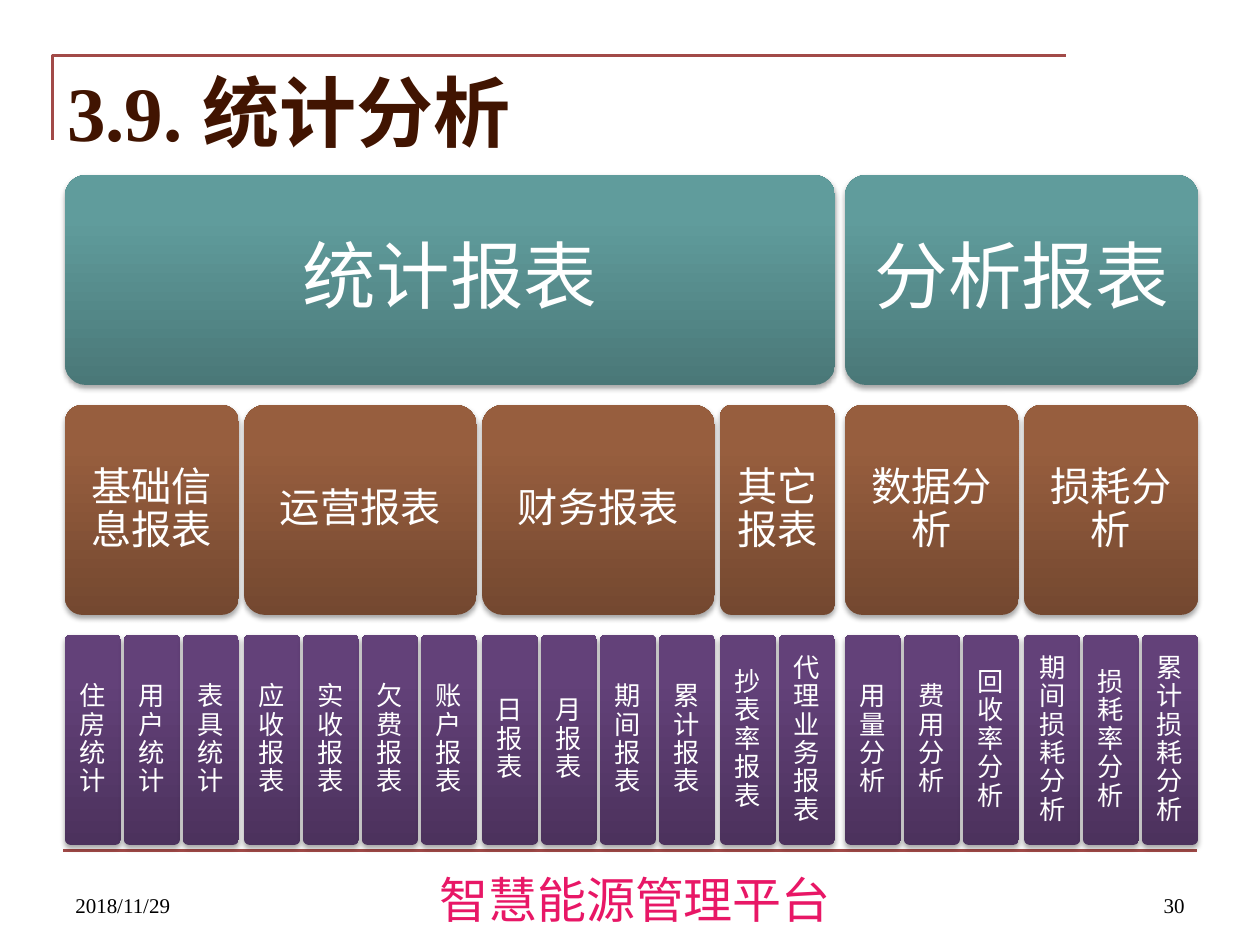
from copy import deepcopy

from lxml.etree import SubElement
from pptx import Presentation
from pptx.dml.color import RGBColor
from pptx.enum.shapes import MSO_CONNECTOR, MSO_SHAPE
from pptx.enum.text import MSO_ANCHOR, PP_ALIGN
from pptx.oxml.ns import qn
from pptx.util import Pt

WHITE = RGBColor(0xFF, 0xFF, 0xFF)
BLACK = RGBColor(0x00, 0x00, 0x00)
RULE_RED = RGBColor(0xA2, 0x4A, 0x48)
TITLE_BROWN = RGBColor(0x41, 0x14, 0x01)
FOOTER_PINK = RGBColor(0xE8, 0x17, 0x66)
TEAL = (RGBColor(0x4A, 0x78, 0x78), RGBColor(0x60, 0x9C, 0x9C), RGBColor(0x5F, 0x9E, 0x9E))
BROWN = (RGBColor(0x74, 0x48, 0x30), RGBColor(0x97, 0x5E, 0x3E), RGBColor(0x99, 0x5E, 0x3D))
PURPLE = (RGBColor(0x4C, 0x32, 0x5D), RGBColor(0x63, 0x41, 0x79), RGBColor(0x64, 0x41, 0x7A))
STOPS = (0, 0.8, 1)

SERIF, SANS, CJK = "Times New Roman", "Arial", "Noto Sans CJK SC"

# Report hierarchy: section, its groups, and their reports
SECTIONS = [
    ("统计报表", [
        ("基础信息报表", ["住房统计", "用户统计", "表具统计"]),
        ("运营报表", ["应收报表", "实收报表", "欠费报表", "账户报表"]),
        ("财务报表", ["日报表", "月报表", "期间报表", "累计报表"]),
        ("其它报表", ["抄表率报表", "代理业务报表"]),
    ]),
    ("分析报表", [
        ("数据分析", ["用量分析", "费用分析", "回收率分析"]),
        ("损耗分析", ["期间损耗分析", "损耗率分析", "累计损耗分析"]),
    ]),
]

# Grid in points
LEFT, TOP = 37.1, 100
ROW_HEIGHT, ROW_PITCH = 120, 131.4
REPORT_WIDTH = 32.15
REPORT_GAP, GROUP_GAP, SECTION_GAP = 1.5, 2.9, 5.6

# Each level: row, gradient, text size, inset
SECTION_LEVEL = (0, TEAL, 42, 11)
GROUP_LEVEL = (1, BROWN, 23, 6.5)
REPORT_LEVEL = (2, PURPLE, 15, 4)


class SlideBuilder:
    def __init__(self, slide):
        self.slide = slide

    def add_run(self, paragraph, text, size, color, font=SERIF, bold=False):
        run = paragraph.add_run()
        run.text = text
        run.font.size = Pt(size)
        run.font.bold = bold
        run.font.color.rgb = color
        run.font.name = font
        SubElement(run.font._element, qn("a:ea")).set("typeface", CJK)

    def text(self, left, top, width, height, content, size, color, font=SERIF,
             bold=False, align=PP_ALIGN.LEFT, anchor=MSO_ANCHOR.TOP, wrap=True,
             inset=(7.2, 3.6)):
        box = self.slide.shapes.add_textbox(Pt(left), Pt(top), Pt(width), Pt(height))
        frame = box.text_frame
        frame.word_wrap = wrap
        frame.vertical_anchor = anchor
        frame.margin_left = frame.margin_right = Pt(inset[0])
        frame.margin_top = frame.margin_bottom = Pt(inset[1])
        paragraph = frame.paragraphs[0]
        paragraph.alignment = align
        self.add_run(paragraph, content, size, color, font, bold)

    def rule(self, x1, y1, x2, y2):
        line = self.slide.shapes.add_connector(
            MSO_CONNECTOR.STRAIGHT, Pt(x1), Pt(y1), Pt(x2), Pt(y2))
        line.line.color.rgb = RULE_RED
        line.line.width = Pt(1.5)
        SubElement(line._element.spPr, qn("a:effectLst"))

    def corner(self, start, *points):
        builder = self.slide.shapes.build_freeform(Pt(start[0]), Pt(start[1]))
        builder.add_line_segments([(Pt(x), Pt(y)) for x, y in points], close=False)
        outline = builder.convert_to_shape()
        outline.shadow.inherit = False
        outline.fill.background()
        outline.line.color.rgb = RULE_RED
        outline.line.width = Pt(1.5)

    def tile(self, left, width, label, level):
        row, colors, size, inset = level
        tile = self.slide.shapes.add_shape(
            MSO_SHAPE.ROUNDED_RECTANGLE, Pt(left), Pt(TOP + row * ROW_PITCH),
            Pt(width), Pt(ROW_HEIGHT))
        tile.adjustments[0] = 0.1
        tile.line.fill.background()
        self.shade(tile, colors)
        self.drop_shadow(tile)
        frame = tile.text_frame
        frame.word_wrap = True
        frame.vertical_anchor = MSO_ANCHOR.MIDDLE
        frame.margin_left = frame.margin_right = Pt(inset)
        frame.margin_top = frame.margin_bottom = Pt(inset)
        paragraph = frame.paragraphs[0]
        paragraph.alignment = PP_ALIGN.CENTER
        paragraph.line_spacing = 0.9
        self.add_run(paragraph, label, size, WHITE, SANS)

    def shade(self, tile, colors):
        tile.fill.gradient()
        tile.fill.gradient_angle = 90
        stop_list = tile._element.spPr.find(".//" + qn("a:gsLst"))
        stop_list.append(deepcopy(stop_list[-1]))
        for stop, position, color in zip(tile.fill.gradient_stops, STOPS, colors):
            stop.position = position
            stop.color.rgb = color

    def drop_shadow(self, tile):
        tile.shadow.inherit = False
        effects = tile._element.spPr.find(qn("a:effectLst"))
        shadow = SubElement(effects, qn("a:outerShdw"), blurRad=str(Pt(3.1)),
                            dist=str(Pt(1.8)), dir="5400000", rotWithShape="0")
        color = SubElement(shadow, qn("a:srgbClr"), val="000000")
        SubElement(color, qn("a:alpha"), val="35000")


def add_hierarchy(builder):
    x = LEFT
    for section, groups in SECTIONS:
        section_left = x
        for group, reports in groups:
            group_left = x
            for report in reports:
                builder.tile(x, REPORT_WIDTH, report, REPORT_LEVEL)
                x += REPORT_WIDTH + REPORT_GAP
            x -= REPORT_GAP
            builder.tile(group_left, x - group_left, group, GROUP_LEVEL)
            x += GROUP_GAP
        x -= GROUP_GAP
        builder.tile(section_left, x - section_left, section, SECTION_LEVEL)
        x += SECTION_GAP


def main():
    deck = Presentation()
    deck.slide_width, deck.slide_height = Pt(720), Pt(540)
    builder = SlideBuilder(deck.slides.add_slide(deck.slide_layouts[6]))

    # Frame lines
    builder.corner((30, 80), (30, 31.7), (609.4, 31.7))
    builder.rule(36, 486, 684, 486)

    # Title
    builder.text(31.3, 35.4, 653.8, 55.4, "3.9. 统计分析", 44, TITLE_BROWN,
                 bold=True, anchor=MSO_ANCHOR.MIDDLE)

    # Report hierarchy
    add_hierarchy(builder)

    # Footer
    builder.text(36, 491.8, 167.8, 36, "2018/11/29", 12, BLACK,
                 anchor=MSO_ANCHOR.BOTTOM)
    builder.text(232.9, 497, 260, 42, "智慧能源管理平台", 28, FOOTER_PINK, font=CJK,
                 align=PP_ALIGN.CENTER, wrap=False, inset=(0, 0))
    builder.text(516.2, 491.8, 167.8, 36, "30", 12, BLACK,
                 align=PP_ALIGN.RIGHT, anchor=MSO_ANCHOR.BOTTOM)

    deck.save("out.pptx")


if __name__ == "__main__":
    main()
